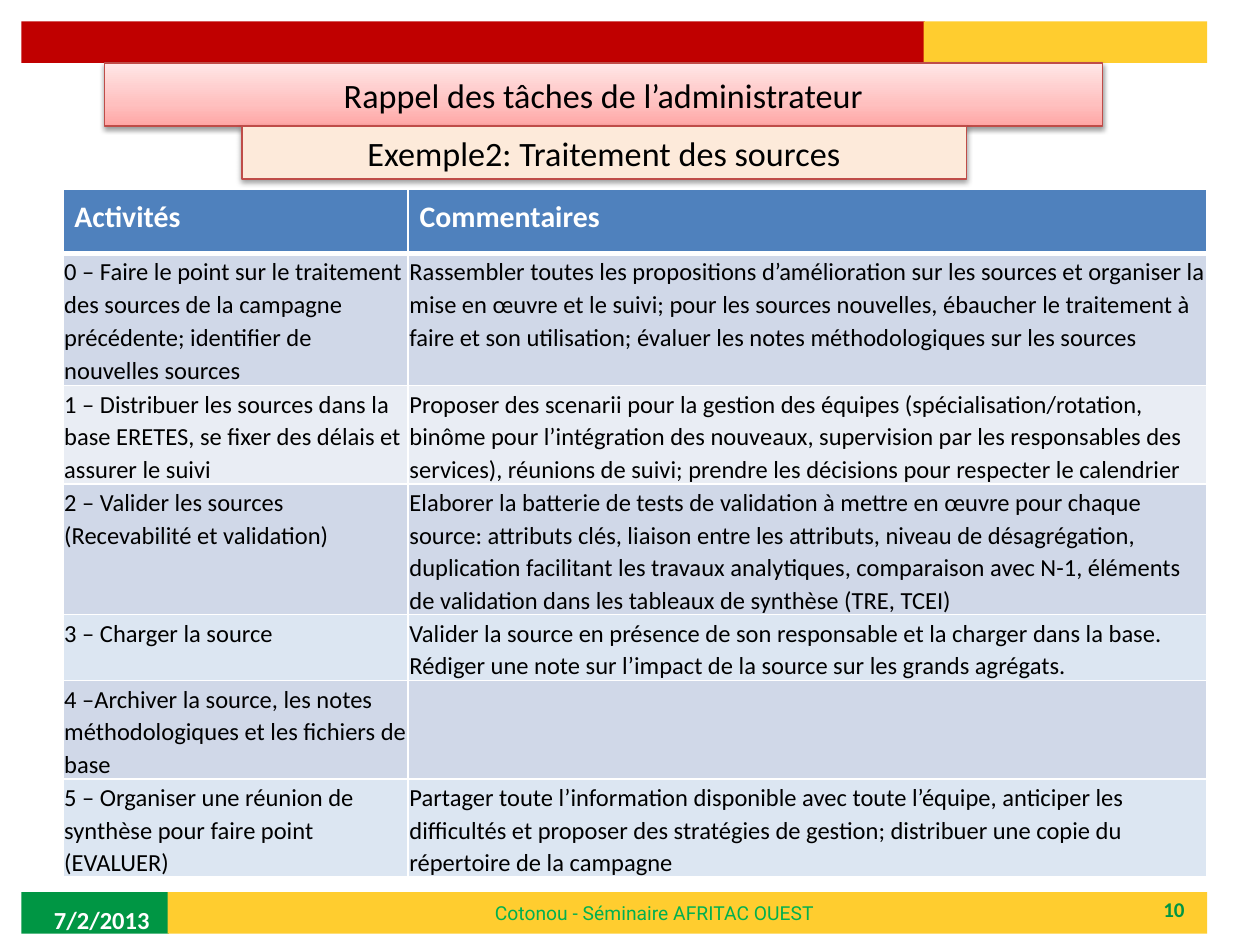
from dataclasses import dataclass
from typing import Optional

import lxml.etree
import pptx
import pptx.dml.color
import pptx.enum.shapes
import pptx.enum.text
import pptx.oxml.ns
import pptx.util

Inches = pptx.util.Inches
Pt = pptx.util.Pt
PP_ALIGN = pptx.enum.text.PP_ALIGN
MSO_ANCHOR = pptx.enum.text.MSO_ANCHOR

RED = "C00000"
YELLOW = "FFCD2F"
GREEN = "009644"
WHITE = "FFFFFF"
BLACK = "000000"
BANNER_LINE = "BF4C48"
HEADER_FILL = "4F81BD"
ROW_FILLS = ["D0D8E8", "E9EDF4", "D0D8E8", "DCE6F2", "D0D8E8", "DCE6F2"]
COLUMN_WIDTHS = [2.74, 6.34]
ROW_HEIGHTS = [0.51, 1.05, 0.73, 0.53, 0.52, 0.49, 0.49]
HEADERS = ["Activités", "Commentaires"]
TASKS = [
    ("0 – Faire le point sur le traitement des sources de la campagne précédente; "
     "identifier de nouvelles sources",
     "Rassembler toutes les propositions d’amélioration sur les sources et organiser la "
     "mise en œuvre et le suivi; pour les sources nouvelles, ébaucher le traitement à faire "
     "et son utilisation; évaluer les notes méthodologiques sur les sources"),
    ("1 – Distribuer les sources dans la base ERETES, se fixer des délais et assurer le suivi",
     "Proposer des scenarii pour la gestion des équipes (spécialisation/rotation, binôme "
     "pour l’intégration des nouveaux, supervision par les responsables des services), "
     "réunions de suivi; prendre les décisions pour respecter le calendrier"),
    ("2 – Valider les sources (Recevabilité et validation)",
     "Elaborer la batterie de tests de validation à mettre en œuvre pour chaque source: "
     "attributs clés, liaison entre les attributs, niveau de désagrégation, duplication "
     "facilitant les travaux analytiques, comparaison avec N-1, éléments de validation "
     "dans les tableaux de synthèse (TRE, TCEI)"),
    ("3 – Charger la source",
     "Valider la source en présence de son responsable et la charger dans la base.\n"
     "Rédiger une note sur l’impact de la source sur les grands agrégats."),
    ("4 –Archiver la source, les notes méthodologiques et les fichiers de base", ""),
    ("5 – Organiser une réunion de synthèse pour faire point (EVALUER)",
     "Partager toute l’information disponible avec toute l’équipe, anticiper les difficultés "
     "et proposer des stratégies de gestion; distribuer une copie du répertoire de la campagne"),
]


@dataclass
class Box:
    left: float
    top: float
    width: float
    height: float

    def lengths(self) -> list:
        return [Inches(value) for value in (self.left, self.top, self.width, self.height)]


@dataclass
class TextStyle:
    size: float
    color: str
    bold: bool = False
    font: str = "Calibri"
    align: Optional[PP_ALIGN] = None
    line_spacing: Optional[float] = None


@dataclass
class Bar:
    box: Box
    color: str


@dataclass
class Label:
    box: Box
    text: str
    style: TextStyle


@dataclass
class Banner:
    box: Box
    text: str
    fill: str
    vertical_inset: float


BARS = [
    Bar(Box(0.17, 7.08, 1.17, 0.33), GREEN),
    Bar(Box(1.33, 7.08, 8.25, 0.33), YELLOW),
    Bar(Box(0.17, 0.17, 7.17, 0.33), RED),
    Bar(Box(7.33, 0.17, 2.25, 0.33), YELLOW),
]
LABELS = [
    Label(Box(7.17, 7.08, 2.33, 0.27), "10", TextStyle(12, GREEN, True, align=PP_ALIGN.RIGHT)),
    Label(Box(0.33, 7.1, 2.33, 0.4), "7/2/2013", TextStyle(14, WHITE, True)),
]
FOOTER = Label(Box(3.83, 7.1, 2.77, 0.29), "Cotonou - Séminaire AFRITAC OUEST",
               TextStyle(11, "00B050", font="Roboto"))
TITLE = Banner(Box(0.83, 0.5, 7.92, 0.5), "Rappel des tâches de l’administrateur", "FFC0BF", 0.05)
SUBTITLE = Banner(Box(1.92, 1, 5.75, 0.42), "Exemple2: Traitement des sources", "FDEADA", 0)
TITLE_STOPS = [(0, "FFA6A5"), (35, "FFC0BF"), (100, "FFE7E7")]


def rgb(color: str) -> pptx.dml.color.RGBColor:
    return pptx.dml.color.RGBColor.from_string(color)


def add_element(parent, tag: str, **attributes):
    values = {name: str(value) for name, value in attributes.items()}
    return lxml.etree.SubElement(parent, pptx.oxml.ns.qn(tag), values)


def write_text(text_frame, text: str, style: TextStyle) -> None:
    text_frame.text = text
    for paragraph in text_frame.paragraphs:
        paragraph.alignment = style.align
        paragraph.line_spacing = style.line_spacing
        for run in paragraph.runs:
            run.font.name = style.font
            run.font.size = Pt(style.size)
            run.font.bold = style.bold
            run.font.color.rgb = rgb(style.color)


def add_rectangle(slide, box: Box, fill: str):
    shape = slide.shapes.add_shape(pptx.enum.shapes.MSO_SHAPE.RECTANGLE, *box.lengths())
    shape.shadow.inherit = False
    shape.fill.solid()
    shape.fill.fore_color.rgb = rgb(fill)
    shape.line.fill.background()
    return shape


def add_label(slide, label: Label):
    shape = slide.shapes.add_textbox(*label.box.lengths())
    shape.text_frame.word_wrap = True
    shape.text_frame.vertical_anchor = MSO_ANCHOR.MIDDLE
    write_text(shape.text_frame, label.text, label.style)
    return shape


def add_footer(slide, label: Label) -> None:
    text_frame = add_label(slide, label).text_frame
    text_frame.word_wrap = False
    text_frame.auto_size = pptx.enum.text.MSO_AUTO_SIZE.SHAPE_TO_FIT_TEXT
    text_frame.vertical_anchor = MSO_ANCHOR.TOP


def add_banner(slide, banner: Banner):
    shape = add_rectangle(slide, banner.box, banner.fill)
    shape.line.color.rgb = rgb(BANNER_LINE)
    shape.line.width = Pt(0.75)
    effects = shape._element.spPr.find(pptx.oxml.ns.qn("a:effectLst"))
    shadow = add_element(effects, "a:outerShdw", blurRad=Pt(3.1), dist=Pt(1.6),
                         dir=90 * 60000, rotWithShape=0)
    shadow_color = add_element(shadow, "a:srgbClr", val=BLACK)
    add_element(shadow_color, "a:alpha", val=38000)
    text_frame = shape.text_frame
    text_frame.word_wrap = True
    text_frame.vertical_anchor = MSO_ANCHOR.MIDDLE
    text_frame.margin_top = text_frame.margin_bottom = Inches(banner.vertical_inset)
    write_text(text_frame, banner.text, TextStyle(19.5, BLACK, align=PP_ALIGN.CENTER))
    return shape


def apply_gradient(shape, stops: list) -> None:
    shape.fill.gradient()
    shape.fill.gradient_angle = 90
    stop_list = shape._element.spPr.find(".//" + pptx.oxml.ns.qn("a:gsLst"))
    for stop in list(stop_list):
        stop_list.remove(stop)
    for position, color in stops:
        stop = add_element(stop_list, "a:gs", pos=position * 1000)
        add_element(stop, "a:srgbClr", val=color)


def set_borders(cell, top: float, bottom: float) -> None:
    properties = cell._tc.get_or_add_tcPr()
    for side, width in (("L", 1), ("R", 1), ("T", top), ("B", bottom)):
        line = add_element(properties, f"a:ln{side}", w=Pt(width))
        fill = add_element(line, "a:solidFill")
        add_element(fill, "a:srgbClr", val=WHITE)


def fill_cell(cell, text: str, row: int) -> None:
    is_header = row == 0
    set_borders(cell, 3 if row == 1 else 1, 3 if is_header else 1)
    cell.fill.solid()
    cell.fill.fore_color.rgb = rgb(HEADER_FILL if is_header else ROW_FILLS[row - 1])
    cell.margin_left = cell.margin_right = Inches(0.09 if is_header else 0.01)
    cell.margin_top = Inches(0.05 if is_header else 0.01)
    cell.margin_bottom = Inches(0.05 if is_header else 0)
    style = TextStyle(17, WHITE, True) if is_header else TextStyle(14, BLACK)
    style.line_spacing = 1.1
    write_text(cell.text_frame, text, style)


def add_task_table(slide) -> None:
    rows = [HEADERS, *TASKS]
    box = Box(0.5, 1.5, sum(COLUMN_WIDTHS), sum(ROW_HEIGHTS))
    table = slide.shapes.add_table(len(rows), len(HEADERS), *box.lengths()).table
    for column, width in zip(table.columns, COLUMN_WIDTHS):
        column.width = Inches(width)
    for row_index, (texts, height) in enumerate(zip(rows, ROW_HEIGHTS)):
        table.rows[row_index].height = Inches(height)
        for column_index, text in enumerate(texts):
            fill_cell(table.cell(row_index, column_index), text, row_index)


def main() -> None:
    presentation = pptx.Presentation()
    presentation.slide_width = Inches(10)
    presentation.slide_height = Inches(7.5)
    slide = presentation.slides.add_slide(presentation.slide_layouts[6])
    for bar in BARS:
        add_rectangle(slide, bar.box, bar.color)
    for label in LABELS:
        add_label(slide, label)
    add_footer(slide, FOOTER)
    apply_gradient(add_banner(slide, TITLE), TITLE_STOPS)
    add_banner(slide, SUBTITLE)
    add_task_table(slide)
    presentation.save("out.pptx")


if __name__ == "__main__":
    main()
